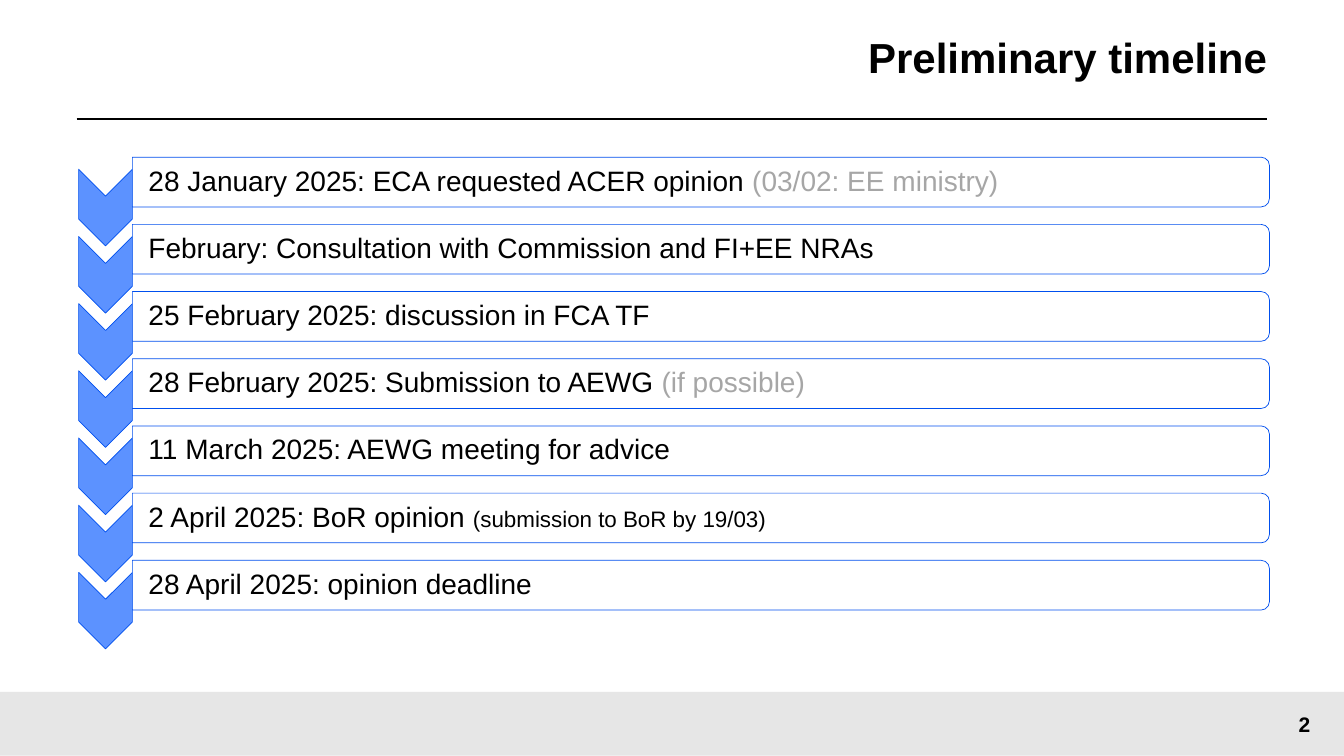
from lxml.etree import SubElement
from pptx import Presentation
from pptx.dml.color import RGBColor
from pptx.enum.shapes import MSO_CONNECTOR, MSO_SHAPE
from pptx.enum.text import MSO_ANCHOR, PP_ALIGN
from pptx.oxml.ns import qn
from pptx.util import Inches, Pt

COLUMNS = 20
BLACK, GREY, BLUE, EDGE = "000000", "A6A6A6", "5C92FF", "004FEE"
STEPS = [
    [("28 January 2025: ECA requested ACER opinion ", {}),
     ("(03/02: EE ministry)", {"color": GREY})],
    [("February: Consultation with Commission and FI+EE NRAs", {})],
    [("25 February 2025: discussion in FCA TF", {})],
    [("28 February 2025: Submission to AEWG ", {}),
     ("(if possible)", {"color": GREY})],
    [("11 March 2025: AEWG meeting for advice", {})],
    [("2 April 2025: BoR opinion ", {}),
     ("(submission to BoR by 19/03)", {"size": 16})],
    [("28 April 2025: opinion deadline", {})],
]


def rgb(value):
    return RGBColor.from_string(value)


def add_run(p, text, size=20, color=BLACK, bold=False, font="Arial"):
    r = p.add_run()
    r.text = text
    r.font.name, r.font.size, r.font.bold = font, Pt(size), bold
    r.font.color.rgb = rgb(color)


class Deck:
    def __init__(self):
        self.prs = Presentation()
        self.prs.slide_width, self.prs.slide_height = Inches(13.33), Inches(7.5)
        self.s = self.prs.slides.add_slide(self.prs.slide_layouts[5])

    def grid(self, *cells):
        return [round(c * self.prs.slide_width / COLUMNS) for c in cells]

    def fill_text(self, sp, runs, align=PP_ALIGN.LEFT, insets=(0, 0, 0, 0), spacing=0.9):
        tf = sp.text_frame
        tf.word_wrap = True
        tf.vertical_anchor = MSO_ANCHOR.MIDDLE
        tf.margin_left, tf.margin_top, tf.margin_right, tf.margin_bottom = map(Inches, insets)
        p = tf.paragraphs[0]
        p.alignment, p.line_spacing = align, spacing
        for text, style in runs:
            add_run(p, text, **style)

    def title(self, text, left, top, width, height):
        sp = self.s.shapes.title
        sp.left, sp.top, sp.width, sp.height = self.grid(left, top, width, height)
        self.fill_text(sp, [(text, {"size": 30, "bold": True})], PP_ALIGN.RIGHT, (0, 0.2, 0, 0.2))

    def text(self, runs, left, top, width, height, **style):
        sp = self.s.shapes.add_textbox(*self.grid(left, top, width, height))
        self.fill_text(sp, runs, **style)

    def rule(self, left, right, row):
        line = self.s.shapes.add_connector(
            MSO_CONNECTOR.STRAIGHT, *self.grid(left, row, right, row))
        line.line.color.rgb, line.line.width = rgb(BLACK), Pt(1.5)
        SubElement(line._element.spPr, qn("a:effectLst"))

    def shape(self, kind, left, top, width, height, fill, edge=None, alpha=None):
        sp = self.s.shapes.add_shape(kind, *self.grid(left, top, width, height))
        sp.shadow.inherit = False
        sp.fill.solid()
        sp.fill.fore_color.rgb = rgb(fill)
        if alpha:
            color = sp._element.spPr.find(qn("a:solidFill"))[0]
            SubElement(color, qn("a:alpha"), val=str(alpha * 1000))
        if edge:
            sp.line.color.rgb, sp.line.width = rgb(edge), Pt(0.5)
        else:
            sp.line.fill.background()
        return sp

    def turned(self, kind, center, middle, width, height, fill, alpha=None):
        sp = self.shape(kind, center - width / 2, middle - height / 2,
                        width, height, fill, EDGE, alpha)
        sp.rotation = 90

    def step(self, runs, middle):
        self.turned(MSO_SHAPE.CHEVRON, 1.57, middle + 0.38, 1.14, 0.8, BLUE)
        self.turned(MSO_SHAPE.ROUND_2_SAME_RECTANGLE, 10.43, middle, 0.74, 16.92, "FFFFFF", 90)
        self.text(runs, 1.97, middle - 0.34, 16.88, 0.68, insets=(0.16, 0.01, 0.01, 0.01))


def main():
    deck = Deck()
    deck.shape(MSO_SHAPE.RECTANGLE, 0, 10.3, COLUMNS, 0.95, "E6E6E6")
    deck.rule(1.14, 18.86, 1.77)
    deck.title("Preliminary timeline", 4.56, 0, 14.3, 1.77)
    deck.text([("2", {"size": 15, "bold": True})], 18.82, 10.3, 1.18, 0.95,
              align=PP_ALIGN.CENTER, spacing=1.0)
    for i, runs in enumerate(STEPS):
        deck.step(runs, 2.71 + i)
    deck.prs.save("out.pptx")


if __name__ == "__main__":
    main()
